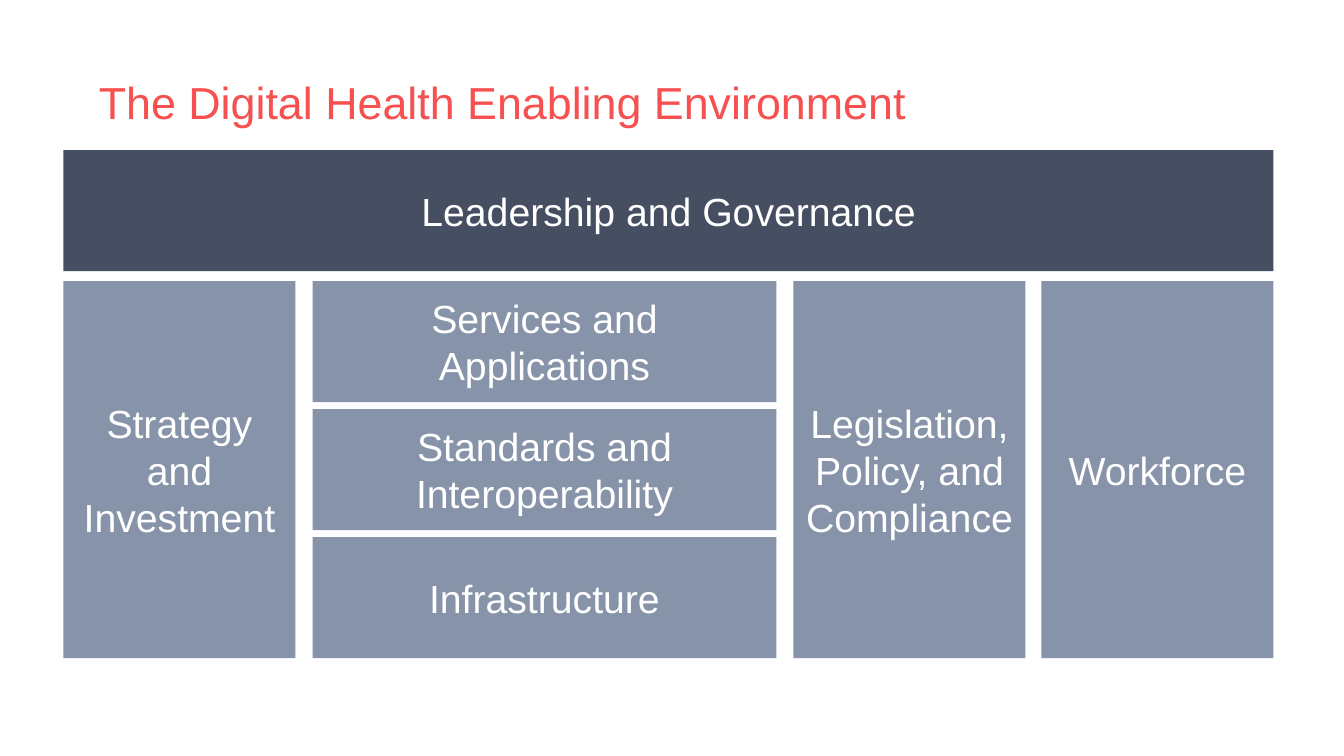
from dataclasses import dataclass

from pptx import Presentation
from pptx.dml.color import RGBColor
from pptx.enum.shapes import MSO_SHAPE
from pptx.enum.text import MSO_ANCHOR, PP_ALIGN
from pptx.slide import Slide
from pptx.text.text import _Paragraph
from pptx.util import Inches, Pt

CORAL = RGBColor(0xF6, 0x50, 0x50)
NAVY = RGBColor(0x46, 0x4F, 0x61)
SLATE = RGBColor(0x87, 0x93, 0xA9)
WHITE = RGBColor(0xFF, 0xFF, 0xFF)

LEFT, TOP = 0.63, 2.79
COLUMN_W, COLUMN_H = 2.3, 3.74
CENTRE_X, CENTRE_W = 3.1, 4.6
LAYER_H, LAYER_STEP = 1.2, 1.27


@dataclass
class Block:
    text: str
    left: float
    top: float
    width: float
    height: float
    fill: RGBColor = SLATE


def style(p: _Paragraph, size: int, color: RGBColor) -> None:
    p.font.name = "Arial"
    p.font.size = Pt(size)
    p.font.color.rgb = color


def add_title(s: Slide, text: str) -> None:
    tf = s.shapes.add_textbox(Inches(0.98), Inches(0.74), Inches(11.72), Inches(1.2)).text_frame
    tf.word_wrap = True
    tf.margin_left = tf.margin_top = tf.margin_right = tf.margin_bottom = 0
    p = tf.paragraphs[0]
    p.text = text
    p.space_after = Pt(18)
    style(p, 32, CORAL)


def add_block(s: Slide, block: Block) -> None:
    sp = s.shapes.add_shape(MSO_SHAPE.RECTANGLE, Inches(block.left), Inches(block.top),
                            Inches(block.width), Inches(block.height))
    sp.shadow.inherit = False
    sp.fill.solid()
    sp.fill.fore_color.rgb = block.fill
    sp.line.fill.background()
    tf = sp.text_frame
    tf.word_wrap = True
    tf.vertical_anchor = MSO_ANCHOR.MIDDLE
    p = tf.paragraphs[0]
    p.text = block.text
    p.alignment = PP_ALIGN.CENTER
    style(p, 28, WHITE)


def main() -> None:
    prs = Presentation()
    prs.slide_width, prs.slide_height = Inches(13.33), Inches(7.5)
    s = prs.slides.add_slide(prs.slide_layouts[6])

    columns = [("Strategy and Investment", LEFT),
               ("Legislation, Policy, and Compliance", 7.87),
               ("Workforce", 10.33)]
    layers = ["Services and Applications", "Standards and Interoperability", "Infrastructure"]

    blocks = [Block("Leadership and Governance", LEFT, 1.49, 12, LAYER_H, NAVY)]
    blocks += [Block(text, left, TOP, COLUMN_W, COLUMN_H) for text, left in columns]
    blocks += [Block(text, CENTRE_X, TOP + i * LAYER_STEP, CENTRE_W, LAYER_H)
               for i, text in enumerate(layers)]

    add_title(s, "The Digital Health Enabling Environment")
    for block in blocks:
        add_block(s, block)
    prs.save("out.pptx")


if __name__ == "__main__":
    main()
